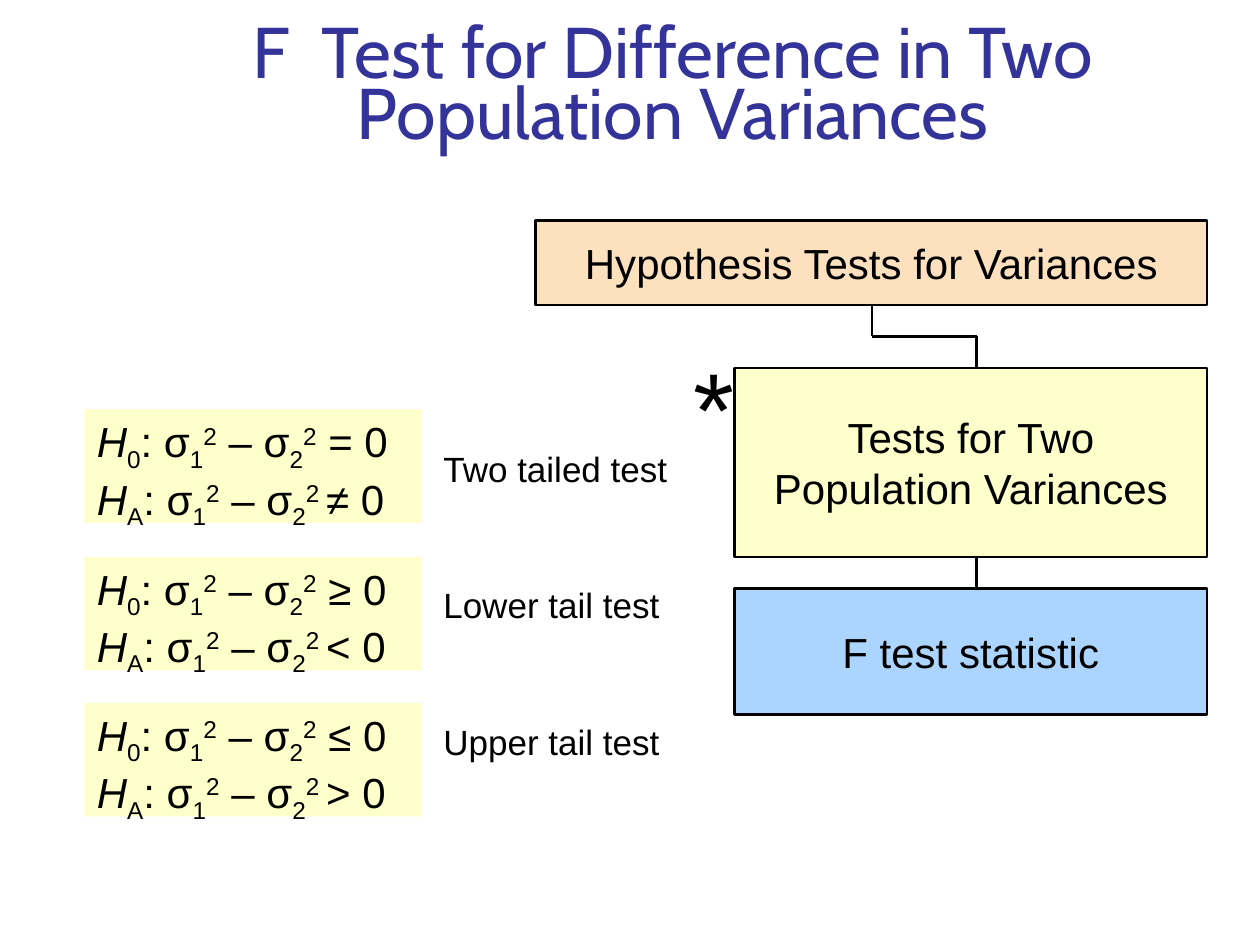
from dataclasses import dataclass

from lxml.etree import SubElement
from pptx import Presentation
from pptx.dml.color import RGBColor
from pptx.enum.shapes import MSO_CONNECTOR, MSO_SHAPE
from pptx.enum.text import MSO_ANCHOR, MSO_AUTO_SIZE, PP_ALIGN
from pptx.oxml.ns import qn
from pptx.util import Inches, Pt

BLACK = "000000"
CREAM = "FFFFCC"
LEFT, CENTER = PP_ALIGN.LEFT, PP_ALIGN.CENTER
SUB, SUP = -25, 30


@dataclass
class Box:
    left: float
    top: float
    width: float
    height: float
    fill: str
    lines: tuple[str, ...] = ()


@dataclass
class Case:
    top: float
    note_top: float
    null: str
    alt: str
    note: str


BOXES = [
    Box(4.25, 1.75, 5.33, 0.67, "FDE0BD", ("Hypothesis Tests for Variances",)),
    Box(5.83, 2.92, 3.75, 1.5, CREAM, ("Tests for Two", "Population Variances")),
    Box(5.83, 4.67, 3.75, 1, "ABD5FF", ("F test statistic",)),
]
LINKS = [
    (6.92, 2.42, 6.92, 2.67),
    (6.92, 2.67, 7.75, 2.67),
    (7.75, 2.67, 7.75, 2.92),
    (7.75, 4.42, 7.75, 4.67),
]
CASES = [
    Case(3.25, 3.5, "=", "≠", "Two tailed test"),
    Case(4.42, 4.58, "≥", "<", "Lower tail test"),
    Case(5.58, 5.67, "≤", ">", "Upper tail test"),
]


def color(code: str) -> RGBColor:
    return RGBColor.from_string(code)


def add_run(para, text: str, size: float, base: int = 0, italic: bool = False,
            face: str = "Arial", ink: str = BLACK) -> None:
    run = para.add_run()
    run.text = text
    font = run.font
    font.name, font.size, font.italic = face, Pt(size), italic
    font.color.rgb = color(ink)
    if base:
        font._element.set("baseline", str(base * 1000))


def add_rect(slide, box: Box):
    rect = slide.shapes.add_shape(
        MSO_SHAPE.RECTANGLE, Inches(box.left), Inches(box.top),
        Inches(box.width), Inches(box.height))
    rect.shadow.inherit = False
    rect.fill.solid()
    rect.fill.fore_color.rgb = color(box.fill)
    return rect


def next_para(frame, index: int, align):
    para = frame.add_paragraph() if index else frame.paragraphs[0]
    para.alignment = align
    return para


def add_box(slide, box: Box) -> None:
    rect = add_rect(slide, box)
    rect.line.color.rgb = color(BLACK)
    rect.line.width = Pt(1.5)
    frame = rect.text_frame
    frame.word_wrap = False
    frame.vertical_anchor = MSO_ANCHOR.MIDDLE
    for index, text in enumerate(box.lines):
        add_run(next_para(frame, index, CENTER), text, 24)


def add_link(slide, ends: tuple[float, float, float, float]) -> None:
    link = slide.shapes.add_connector(
        MSO_CONNECTOR.STRAIGHT, *(Inches(end) for end in ends))
    link.line.color.rgb = color(BLACK)
    link.line.width = Pt(1.5)
    SubElement(link._element.spPr, qn("a:effectLst"))


def add_note(slide, left: float, top: float, width: float, height: float,
             text: str, size: float, align=LEFT) -> None:
    note = slide.shapes.add_textbox(
        Inches(left), Inches(top), Inches(width), Inches(height))
    note.text_frame.word_wrap = True
    add_run(next_para(note.text_frame, 0, align), text, size)


def add_claim(para, mark: str, square: str, ending: str) -> None:
    add_run(para, "H", 24, italic=True)
    parts = [(mark, SUB), (": σ", 0), ("1", SUB), ("2", SUP),
             (" – σ", 0), ("2", SUB), (square, SUP), (ending, 0)]
    for text, base in parts:
        add_run(para, text, 24, base)


def add_case(slide, case: Case) -> None:
    rect = add_rect(slide, Box(0.67, case.top, 2.67, 0.9, CREAM))
    rect.line.fill.background()
    frame = rect.text_frame
    frame.word_wrap = True
    frame.vertical_anchor = MSO_ANCHOR.TOP
    add_claim(next_para(frame, 0, LEFT), "0", "2", f" {case.null} 0")
    add_claim(next_para(frame, 1, LEFT), "A", "2 ", f"{case.alt} 0")
    add_note(slide, 3.42, case.note_top, 2, 0.43, case.note, 20)


def set_title(slide) -> None:
    title = slide.shapes.title
    title.left, title.top = Inches(1.08), Inches(0.17)
    title.width, title.height = Inches(8.52), Inches(1.08)
    frame = title.text_frame
    frame.word_wrap = True
    frame.auto_size = MSO_AUTO_SIZE.NONE
    frame.vertical_anchor = MSO_ANCHOR.BOTTOM
    para = next_para(frame, 0, CENTER)
    para.line_spacing = 0.7
    add_run(para, "F  Test for Difference in Two Population Variances", 41,
            face="Cabin", ink="333399")


def main() -> None:
    deck = Presentation()
    deck.slide_width, deck.slide_height = Inches(10), Inches(7.5)
    slide = deck.slides.add_slide(deck.slide_layouts[5])
    set_title(slide)

    # Tree of tests
    for box in BOXES:
        add_box(slide, box)
    for ends in LINKS:
        add_link(slide, ends)
    add_note(slide, 5.33, 2.67, 0.67, 1.1, "*", 60, CENTER)

    # Hypothesis pairs with their notes
    for case in CASES:
        add_case(slide, case)

    deck.save("out.pptx")


if __name__ == "__main__":
    main()
